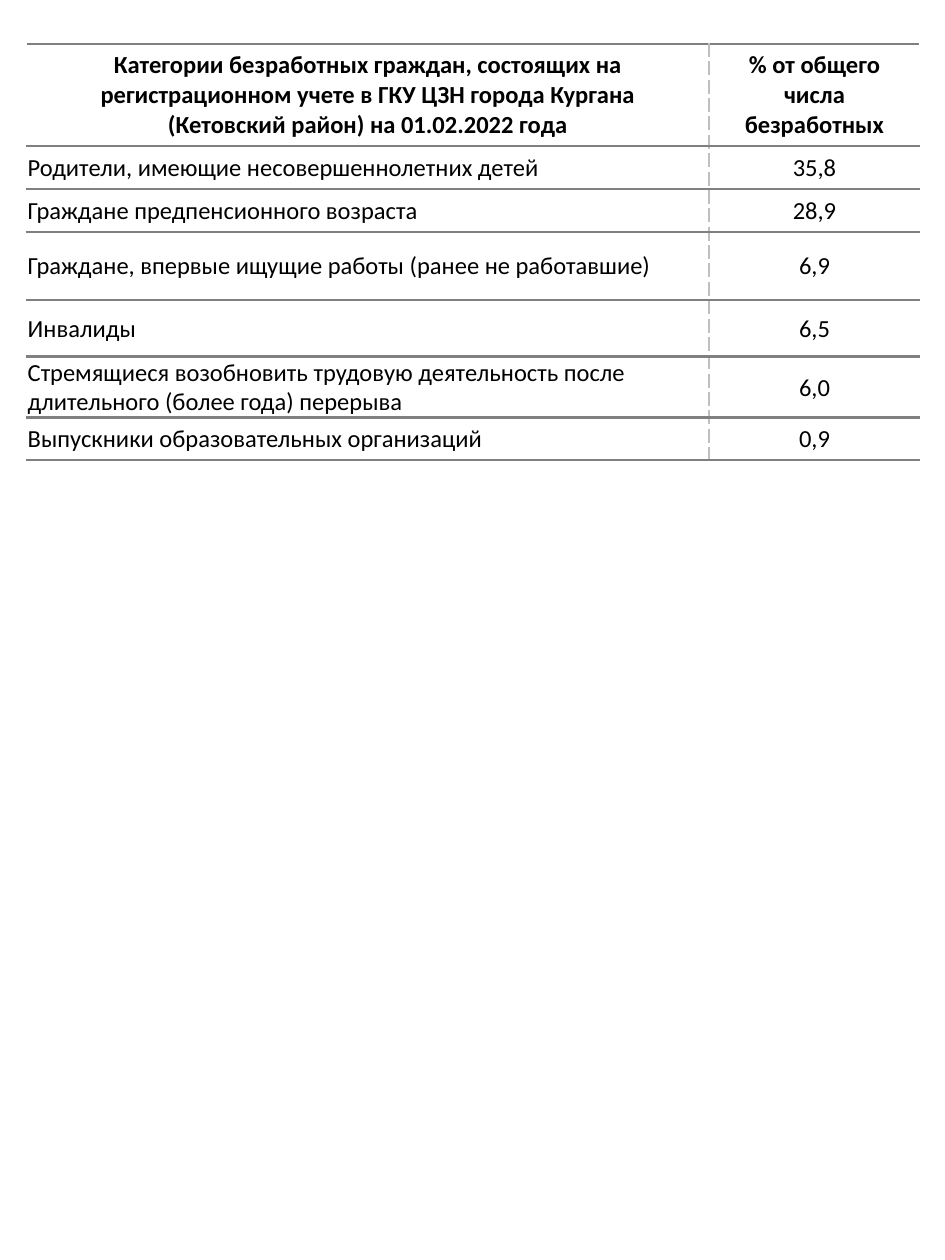
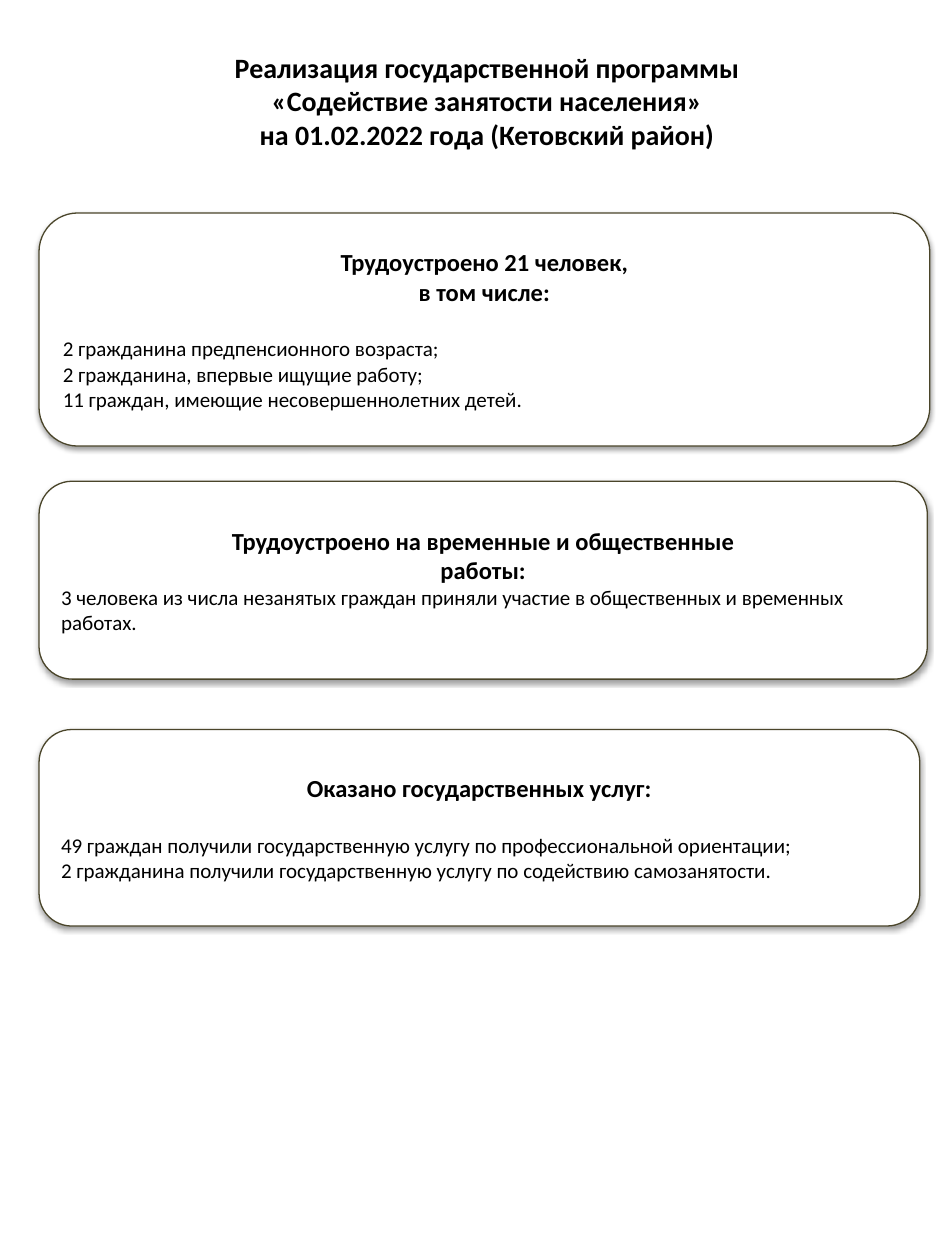
from lxml import etree
from pptx import Presentation
from pptx.dml.color import RGBColor as Rgb
from pptx.enum.shapes import MSO_SHAPE as Shape
from pptx.enum.text import MSO_ANCHOR as Anchor, MSO_AUTO_SIZE as AutoSize, PP_ALIGN as Align
from pptx.oxml.ns import qn
from pptx.util import Inches, Pt

COLORS = {"text": "000000", "page": "FFFFFF", "rule": "808080",
          "divider": "BFBFBF", "outline": "4A452A", "shadow": "000000"}
FONT = "Calibri"
TITLE = {"size": Pt(16), "bold": True}
HEADING = {"size": Pt(14), "bold": True}
CELL = {"size": Pt(14), "bold": False}
BODY = {"size": Pt(12), "bold": False}
TIGHT_MARGINS = {"margin_left": Inches(0.01), "margin_top": Inches(0.01),
                 "margin_right": Inches(0.01), "margin_bottom": Inches(0)}

CATEGORIES = [
    ("Категории безработных граждан, состоящих на регистрационном учете "
     "в ГКУ ЦЗН города Кургана (Кетовский район) на 01.02.2022 года",
     "% от общего числа безработных", 0.8),
    ("Родители, имеющие несовершеннолетних детей", "35,8", 0.34),
    ("Граждане предпенсионного возраста", "28,9", 0.34),
    ("Граждане, впервые ищущие работы (ранее не работавшие)", "6,9", 0.54),
    ("Инвалиды", "6,5", 0.45),
    ("Стремящиеся возобновить трудовую деятельность после длительного "
     "(более года) перерыва", "6,0", 0.34),
    ("Выпускники образовательных организаций", "0,9", 0.34),
]
PROGRAM_TITLE = ["Реализация государственной программы",
                 "«Содействие занятости населения»",
                 "на 01.02.2022 года (Кетовский район)"]
# Box, headings, body lines, gap between them in points
RESULTS = [
    ((0.31, 1.69, 7.07, 1.85),
     ["Трудоустроено 21 человек,", "в том числе:"],
     ["2 гражданина предпенсионного возраста;",
      "2 гражданина, впервые ищущие работу;",
      "11 граждан, имеющие несовершеннолетних детей."], 17),
    ((0.31, 3.82, 7.05, 1.57),
     ["Трудоустроено на временные и общественные", "работы:"],
     ["3 человека из числа незанятых граждан приняли участие "
      "в общественных и временных работах."], 0),
    ((0.31, 5.79, 6.99, 1.56),
     ["Оказано государственных услуг:"],
     ["49 граждан получили государственную услугу по профессиональной ориентации;",
      "2 гражданина получили государственную услугу по содействию самозанятости."], 17),
]


def color(name):
    return Rgb.from_string(COLORS[name])


def apply(target, values):
    for name, value in values.items():
        setattr(target, name, value)


def write(frame, lines):
    """Fill a text frame from (text, font format, alignment, space before)."""
    for index, (text, style, align, gap) in enumerate(lines):
        para = frame.paragraphs[0] if index == 0 else frame.add_paragraph()
        apply(para, {"alignment": align, "space_before": Pt(gap)})
        span = para.add_run()
        span.text = text
        apply(span.font, {"name": FONT, **style})
        span.font.color.rgb = color("text")


def add_color(parent, name):
    return etree.SubElement(parent, qn("a:srgbClr"), val=COLORS[name])


def add_border(cell, side, name, dash="solid"):
    line = etree.SubElement(cell._tc.get_or_add_tcPr(), qn(f"a:ln{side}"), w=str(Pt(1.5)))
    add_color(etree.SubElement(line, qn("a:solidFill")), name)
    etree.SubElement(line, qn("a:prstDash"), val=dash)


def add_shadow(box):
    effects = etree.SubElement(box._element.spPr, qn("a:effectLst"))
    shadow = etree.SubElement(effects, qn("a:outerShdw"), blurRad=str(Pt(3.1)),
                              dist=str(Pt(1.6)), dir="5400000", rotWithShape="0")
    etree.SubElement(add_color(shadow, "shadow"), qn("a:alpha"), val="38000")


def add_category_table(page, box):
    left, top, width, height = map(Inches, box)
    table = page.shapes.add_table(len(CATEGORIES), 2, left, top, width, height).table
    apply(table, {"first_row": False, "horz_banding": False})
    table.columns[0].width = Inches(5.42)
    table.columns[1].width = width - Inches(5.42)
    for row, (*texts, row_height) in enumerate(CATEGORIES):
        table.rows[row].height = Inches(row_height)
        for column, text in enumerate(texts):
            cell = table.cell(row, column)
            cell.vertical_anchor = Anchor.MIDDLE
            if row:
                apply(cell, TIGHT_MARGINS)
            align = Align.LEFT if row and column == 0 else Align.CENTER
            write(cell.text_frame, [(text, CELL if row else HEADING, align, 0)])
            # Dashed divider between columns, solid rules between rows
            add_border(cell, "L" if column else "R", "divider", "lgDash")
            for side in "TB":
                add_border(cell, side, "rule")
            cell.fill.background()


def add_title(page, box, lines):
    frame = page.shapes.add_textbox(*map(Inches, box)).text_frame
    apply(frame, {"word_wrap": True, "auto_size": AutoSize.SHAPE_TO_FIT_TEXT})
    write(frame, [(line, TITLE, Align.CENTER, 0) for line in lines])


def add_result_box(page, box, headings, body, gap):
    panel = page.shapes.add_shape(Shape.ROUNDED_RECTANGLE, *map(Inches, box))
    panel.fill.solid()
    panel.fill.fore_color.rgb = color("page")
    panel.line.color.rgb = color("outline")
    panel.line.width = Pt(0.75)
    add_shadow(panel)
    apply(panel.text_frame, {"word_wrap": True, "vertical_anchor": Anchor.MIDDLE})
    lines = [(text, HEADING, Align.CENTER, 0) for text in headings]
    lines += [(text, BODY, Align.LEFT, 0 if index else gap)
              for index, text in enumerate(body)]
    write(panel.text_frame, lines)


def main():
    deck = Presentation()
    apply(deck, {"slide_width": Inches(7.5), "slide_height": Inches(10)})
    blank = deck.slide_layouts[6]

    # Categories of the unemployed
    add_category_table(deck.slides.add_slide(blank), (0.21, 0.35, 7.09, 3.15))

    # Results of the programme
    page = deck.slides.add_slide(blank)
    add_title(page, (0.52, 0.35, 6.69, 0.91), PROGRAM_TITLE)
    for result in RESULTS:
        add_result_box(page, *result)

    deck.save("out.pptx")


if __name__ == "__main__":
    main()
